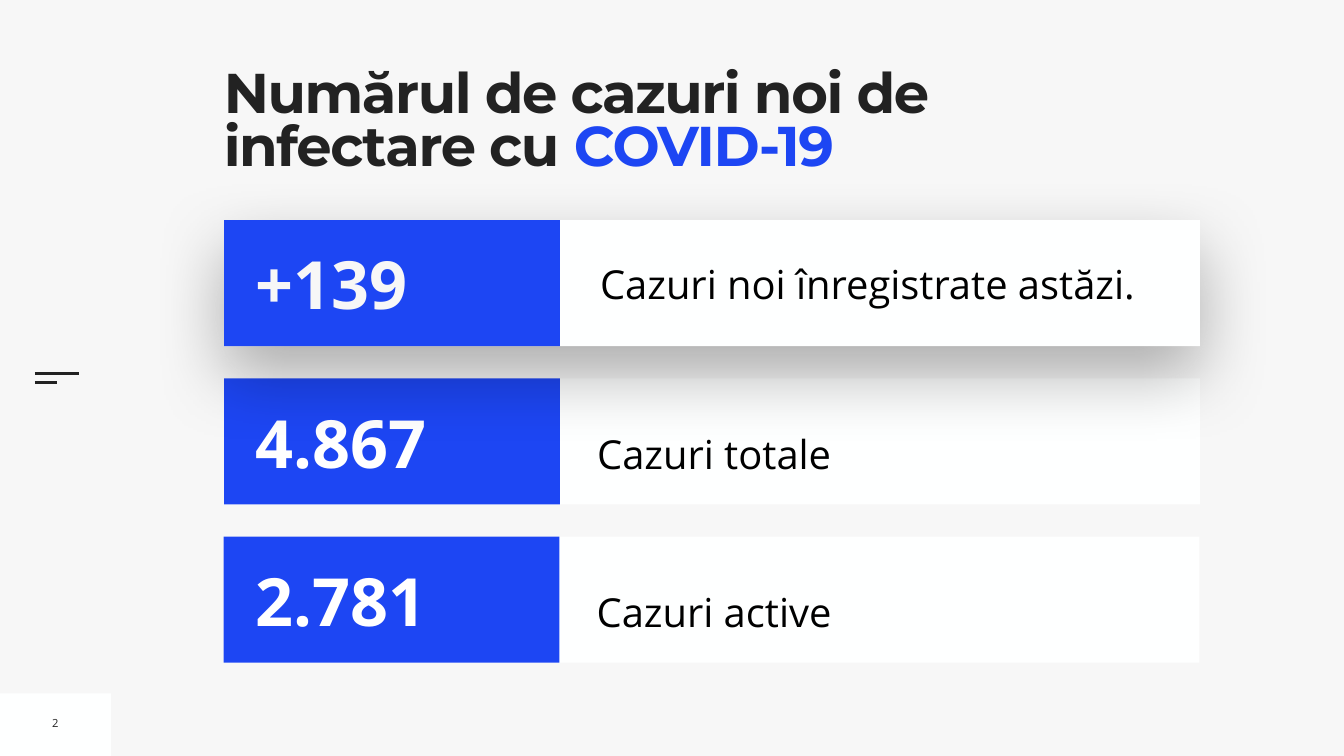
from lxml.etree import SubElement
from pptx import Presentation
from pptx.dml.color import RGBColor
from pptx.enum.shapes import MSO_CONNECTOR as Connector, MSO_SHAPE as Shape
from pptx.enum.text import MSO_ANCHOR as Anchor, MSO_AUTO_SIZE as AutoSize, PP_ALIGN as Align
from pptx.oxml import parse_xml
from pptx.oxml.ns import nsdecls, qn
from pptx.util import Pt

PX = 9144
COLORS = {"background": "F7F7F7", "panel": "FEFFFF", "accent": "1D46F3",
          "ink": "222222", "label": "000000", "figure": "FFFFFF"}
SHADOW = (f'<a:effectLst {nsdecls("a")}><a:outerShdw blurRad="{Pt(100)}" dist="{Pt(40)}" '
          'dir="5400000" algn="ctr" rotWithShape="0"><a:srgbClr val="000000">'
          '<a:alpha val="30000"/></a:srgbClr></a:outerShdw></a:effectLst>')


def px(*lengths):
    return [length * PX for length in lengths]


def color(name):
    return RGBColor.from_string(COLORS[name])


def write(paragraph, text, size=57, font="Open Sans", ink="label", bold=False, tracking=0):
    run = paragraph.add_run()
    run.text = text
    run.font.size = Pt(size)
    run.font.name = font
    run.font.bold = bold
    run.font.color.rgb = color(ink)
    if tracking:
        run.font._element.set("spc", str(tracking))


class SlideBuilder:
    """Holds the style and the current slide and adds its elements."""

    def __init__(self, presentation):
        self.slide = presentation.slides.add_slide(presentation.slide_layouts[5])
        self.slide.background.fill.solid()
        self.slide.background.fill.fore_color.rgb = color("background")
        self.shapes = self.slide.shapes

    def title(self, box, lines):
        title = self.slide.shapes.title
        title.left, title.top, title.width, title.height = px(*box)
        frame = self.frame(title, 0, Anchor.TOP)
        for index, runs in enumerate(lines):
            paragraph = frame.add_paragraph() if index else frame.paragraphs[0]
            paragraph.alignment = Align.LEFT
            paragraph.line_spacing = 0.8
            for text, ink in runs:
                write(paragraph, text, size=80, font="Montserrat", ink=ink, bold=True, tracking=-200)
        tree = title._element.getparent()
        tree.append(title._element)

    def frame(self, shape, inset, anchor=Anchor.MIDDLE, wrap=True):
        frame = shape.text_frame
        frame.word_wrap = wrap
        frame.auto_size = AutoSize.NONE
        frame.vertical_anchor = anchor
        frame.margin_left = frame.margin_top = frame.margin_right = frame.margin_bottom = inset * PX
        return frame

    def rectangle(self, box, fill, shadow=False):
        shape = self.shapes.add_shape(Shape.RECTANGLE, *px(*box))
        shape.fill.solid()
        shape.fill.fore_color.rgb = color(fill)
        shape.line.fill.background()
        if shadow:
            shape._element.spPr.append(parse_xml(SHADOW))
        else:
            shape.shadow.inherit = False

    def line(self, left, top, right):
        connector = self.shapes.add_connector(Connector.STRAIGHT, *px(left, top, right, top))
        connector.line.color.rgb = color("ink")
        connector.line.width = Pt(3)
        SubElement(connector._element.spPr, qn("a:effectLst"))

    def text(self, box, text, inset=10, wrap=True, align=Align.LEFT, spacing=None, **style):
        frame = self.frame(self.shapes.add_textbox(*px(*box)), inset, wrap=wrap)
        paragraph = frame.paragraphs[0]
        paragraph.alignment = align
        paragraph.line_spacing = spacing
        write(paragraph, text, **style)

    def case_row(self, left, top, figure, label, highlight=False):
        self.shapes = self.slide.shapes.add_group_shape().shapes
        self.rectangle((left, top, 1936, 250), "panel", shadow=highlight)
        if highlight:
            self.text((left + 736, top + 67, 1176, 116), label)
        else:
            self.text((left + 740, top + 78, 1158, 112), label, inset=0, spacing=1.3)
        self.rectangle((left, top, 666, 250), "accent")
        self.text((left + 53, top + 35, 603, 180), figure, size=95, bold=True,
                  ink="background" if highlight else "figure")
        self.shapes = self.slide.shapes


def main():
    presentation = Presentation()
    presentation.slide_width, presentation.slide_height = px(2667, 1500)
    builder = SlideBuilder(presentation)
    builder.rectangle((0, 1376, 220, 124), "panel")
    builder.line(69, 741, 157)
    builder.line(69, 759, 113)
    builder.text((93, 1409, 34, 51), "2", wrap=False, align=Align.CENTER, size=16, ink="ink")

    first_top, pitch = 437, 314
    builder.case_row(445, first_top + pitch, "4.867", "Cazuri totale")
    builder.title((444, 139, 2002, 273), [
        [("Numărul de cazuri noi de", "ink")],
        [("infectare cu ", "ink"), ("COVID-19", "accent")],
    ])
    builder.case_row(445, first_top, "+139", "Cazuri noi înregistrate astăzi.", highlight=True)
    builder.case_row(444, first_top + 2 * pitch, "2.781", "Cazuri active")
    presentation.save("out.pptx")


if __name__ == "__main__":
    main()
